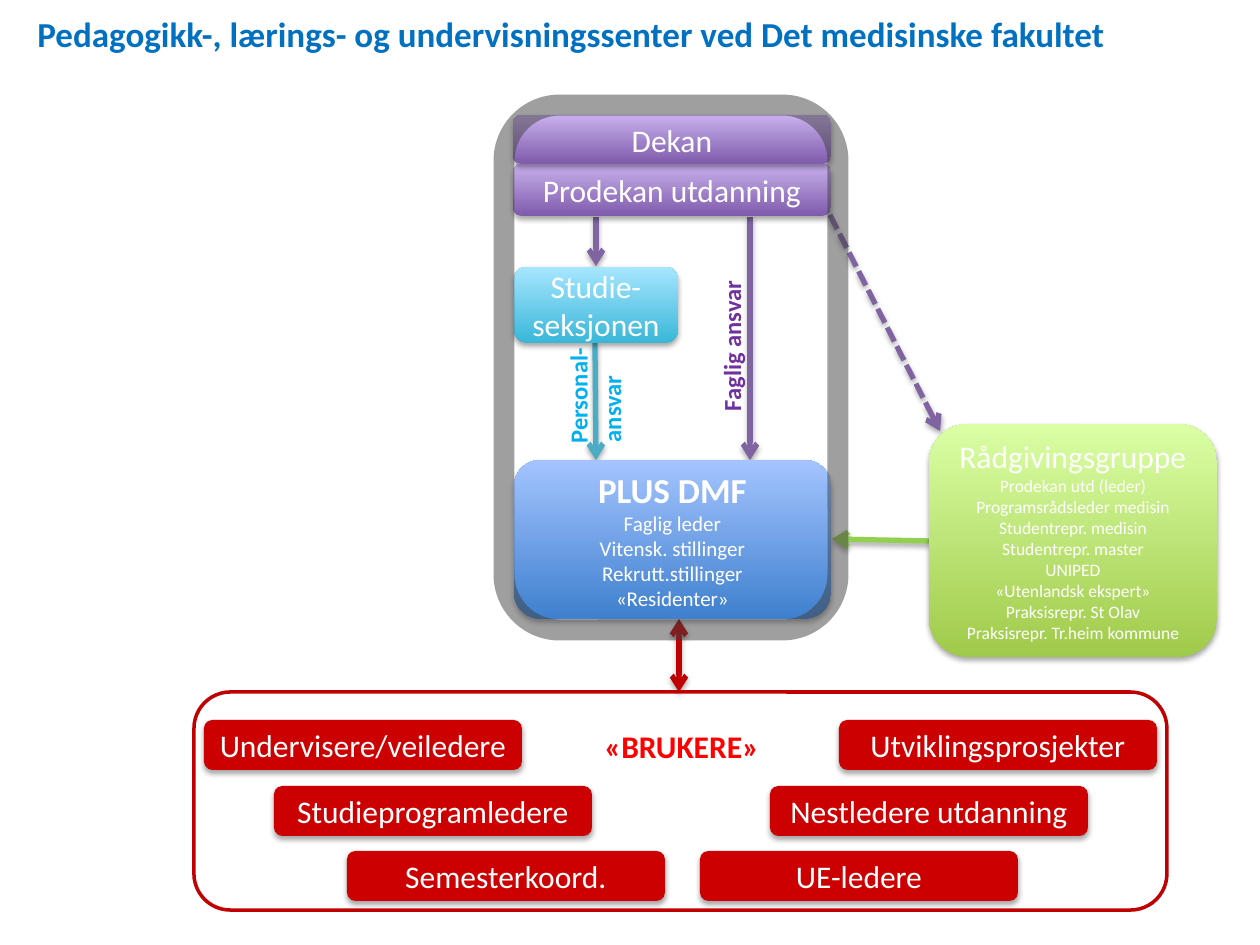
from lxml import etree
from pptx import Presentation, util as u
from pptx.dml.color import RGBColor
from pptx.enum import dml, shapes, text
from pptx.oxml.ns import qn

PX = u.Inches(1) / 126
rgb = RGBColor.from_string


def add_shadow(sp):
    effects = etree.SubElement(sp._element.spPr, qn("a:effectLst"))
    shadow = etree.SubElement(effects, qn("a:outerShdw"), blurRad="40000",
                              dist="23000", dir="5400000", rotWithShape="0")
    color = etree.SubElement(shadow, qn("a:srgbClr"), val="000000")
    etree.SubElement(color, qn("a:alpha"), val="35000")


def write(sp, lines, color, align, wrap=True):
    tf = sp.text_frame
    tf.word_wrap = wrap
    for i, (line, size, bold) in enumerate(lines):
        p = tf.paragraphs[0] if i == 0 else tf.add_paragraph()
        p.alignment = align
        r = p.add_run()
        r.text = line
        fmt = {"name": "Calibri", "size": u.Pt(size), "bold": bold}
        for key, value in fmt.items():
            setattr(r.font, key, value)
        r.font.color.rgb = rgb(color)


prs = Presentation()
prs.slide_width, prs.slide_height = u.Inches(10), u.Inches(7.5)
s = prs.slides.add_slide(prs.slide_layouts[6])

# Arrows: start, end, colour, dashed, arrowheads
arrows = [
    (830, 215, 940, 431, "8064A2", True, ["tailEnd"]),
    (595, 343, 596, 460, "4BACC6", False, ["tailEnd"]),
    (679, 619, 679, 692, "C00000", False, ["headEnd", "tailEnd"]),
    (929, 541, 832, 539, "92D050", False, ["tailEnd"]),
    (596, 217, 596, 266, "8064A2", False, ["tailEnd"]),
    (750, 217, 750, 460, "8064A2", False, ["tailEnd"]),
]
for *ends, color, dashed, heads in arrows:
    c = s.shapes.add_connector(shapes.MSO_CONNECTOR.STRAIGHT,
                               *[round(v * PX) for v in ends])
    c.line.color.rgb = rgb(color)
    c.line.width = u.Pt(3)
    if dashed:
        c.line.dash_style = dml.MSO_LINE.SQUARE_DOT
    for head in heads:
        etree.SubElement(c.line._get_or_add_ln(), qn("a:" + head), type="arrow")
    add_shadow(c)

# Boxes: place, fill colours from bottom to top, lines
purple = ["7F5BAB", "C8B0ED"]
plus = ["Faglig leder", "Vitensk. stillinger", "Rekrutt.stillinger", "«Residenter»"]
advisers = ["Prodekan utd (leder)", "Programsrådsleder medisin",
            "Studentrepr. medisin", "Studentrepr. master", "UNIPED",
            "«Utenlandsk ekspert»", "Praksisrepr. St Olav",
            "Praksisrepr. Tr.heim kommune"]
boxes = [
    (513, 164, 318, 52, purple, [("Prodekan utdanning", 18, False)]),
    (513, 115, 318, 49, purple, [("Dekan", 18, False)]),
    (514, 460, 317, 159, ["3F80CE", "A4C4FF"],
     [("PLUS DMF", 20, True)] + [(line, 12, False) for line in plus]),
    (929, 424, 288, 233, ["A0CA4A", "DAFFA5"],
     [("Rådgivingsgruppe", 18, False)] + [(line, 10, False) for line in advisers]),
    (514, 267, 164, 76, ["39B7D8", "A7E6FF"], [("Studie-seksjonen", 18, False)]),
]

# User boxes: each row steps inwards from both sides
users = [
    (720, 204, "Undervisere/veiledere", 839, "Utviklingsprosjekter"),
    (786, 274, "Studieprogramledere", 770, "Nestledere utdanning"),
    (851, 347, "Semesterkoord.", 700, "UE-ledere"),
]
for y, left, left_name, right, right_name in users:
    for x, name in [(left, left_name), (right, right_name)]:
        boxes.append((x, y, 318, 50, ["CC0000"], [(name, 18, False)]))

for *place, colors, lines in boxes:
    sp = s.shapes.add_shape(shapes.MSO_SHAPE.FLOWCHART_ALTERNATE_PROCESS,
                            *[round(v * PX) for v in place])
    if len(colors) == 2:
        sp.fill.gradient()
        sp.fill.gradient_angle = 90
        for stop, color in zip(sp.fill.gradient_stops, colors):
            stop.color.rgb = rgb(color)
    else:
        sp.fill.solid()
        sp.fill.fore_color.rgb = rgb(colors[0])
    sp.line.fill.background()
    add_shadow(sp)
    sp.text_frame.vertical_anchor = text.MSO_ANCHOR.MIDDLE
    write(sp, lines, "FFFFFF", text.PP_ALIGN.CENTER)

# Frames: place, line colour, width, opacity in percent
frames = [
    (194, 692, 973, 218, "C00000", 2, 100),
    (504, 105, 334, 525, "404040", 12, 50),
]
for *place, color, width, opacity in frames:
    sp = s.shapes.add_shape(shapes.MSO_SHAPE.ROUNDED_RECTANGLE,
                            *[round(v * PX) for v in place])
    sp.shadow.inherit = False
    sp.fill.background()
    sp.line.color.rgb = rgb(color)
    sp.line.width = u.Pt(width)
    if opacity < 100:
        clr = sp.line._get_or_add_ln().find(".//" + qn("a:srgbClr"))
        etree.SubElement(clr, qn("a:alpha"), val=str(opacity * 1000))

# Title and labels: place, rotation, text, size, colour, wrap
labels = [
    (592, 721, 183, 50, 0, "«BRUKERE»", 18, "FF0000", False),
    (25, 6, 1221, 55, 0,
     "Pedagogikk-, lærings- og undervisningssenter ved Det medisinske fakultet",
     20, "0070C0", True),
    (514, 370, 129, 43, 270, "Personal-", 14, "00B0F0", True),
    (554, 375, 116, 43, 270, "ansvar", 14, "00B0F0", True),
    (654, 324, 156, 43, 270, "Faglig ansvar", 14, "7030A0", True),
]
for *place, rotation, label, size, color, wrap in labels:
    sp = s.shapes.add_textbox(*[round(v * PX) for v in place])
    sp.rotation = rotation
    sp.text_frame.auto_size = text.MSO_AUTO_SIZE.SHAPE_TO_FIT_TEXT
    write(sp, [(label, size, True)], color, text.PP_ALIGN.LEFT, wrap)

prs.save("out.pptx")
